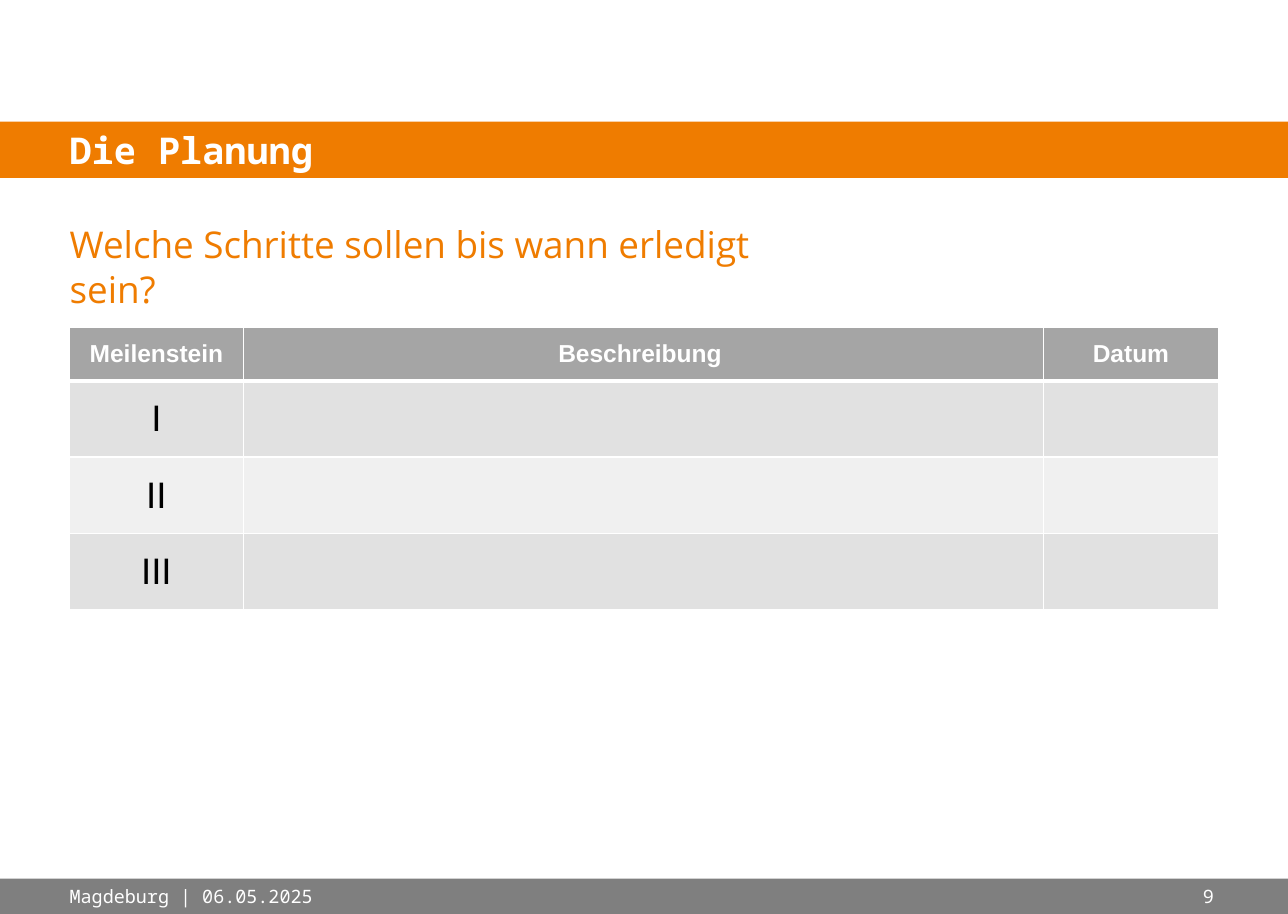
"""Build the planning slide with its milestone table."""
from lxml.etree import SubElement
from pptx import Presentation
from pptx.dml.color import RGBColor
from pptx.enum.shapes import MSO_SHAPE as Shape
from pptx.enum.text import MSO_ANCHOR as Anchor, PP_ALIGN as Align
from pptx.oxml.ns import qn
from pptx.util import Inches, Pt

ORANGE = RGBColor(0xEF, 0x7C, 0x00)
GREY = RGBColor(0x7F, 0x7F, 0x7F)
HEADER_GREY = RGBColor(0xA5, 0xA5, 0xA5)
DARK_ROW = RGBColor(0xE1, 0xE1, 0xE1)
LIGHT_ROW = RGBColor(0xF0, 0xF0, 0xF0)
WHITE = RGBColor(0xFF, 0xFF, 0xFF)
BLACK = RGBColor(0x00, 0x00, 0x00)
MONO = "Noto Sans Mono"
MARGIN = 0.63


def write(frame, text, size, font, color, bold=False, align=Align.LEFT):
    paragraph = frame.paragraphs[0]
    paragraph.alignment = align
    run = paragraph.add_run()
    run.text = text
    run.font.size = Pt(size)
    run.font.name = font
    run.font.color.rgb = color
    run.font.bold = bold


def set_insets(frame, left=0):
    frame.margin_left = Inches(left)
    frame.margin_top = frame.margin_right = frame.margin_bottom = 0
    frame.word_wrap = True


prs = Presentation()
prs.slide_width, prs.slide_height = Inches(11.65), Inches(8.27)
slide = prs.slides.add_slide(prs.slide_layouts[6])

bands = []
for top, height, color in [(7.95, 0.32, GREY), (1.1, 0.51, ORANGE)]:
    band = slide.shapes.add_shape(
        Shape.RECTANGLE, 0, Inches(top), prs.slide_width, Inches(height))
    band.shadow.inherit = False
    band.fill.solid()
    band.fill.fore_color.rgb = color
    band.line.fill.background()
    bands.append(band)

title = bands[1].text_frame
set_insets(title, MARGIN)
title.vertical_anchor = Anchor.MIDDLE
write(title, "Die Planung", 24, MONO, WHITE, bold=True)

captions = [
    (MARGIN, 2.01, 6.85, 0.4, "Welche Schritte sollen bis wann erledigt sein?",
     24, "Open Sans", ORANGE, Anchor.TOP, Align.LEFT),
    (MARGIN, 7.95, 2.71, 0.32, "Magdeburg | 06.05.2025",
     12, MONO, WHITE, Anchor.MIDDLE, Align.LEFT),
    (10.2, 7.95, 0.78, 0.32, "9",
     12, MONO, WHITE, Anchor.MIDDLE, Align.RIGHT),
]
for left, top, width, height, text, size, font, color, anchor, align in captions:
    caption = slide.shapes.add_textbox(
        Inches(left), Inches(top), Inches(width), Inches(height)).text_frame
    set_insets(caption)
    caption.vertical_anchor = anchor
    write(caption, text, size, font, color, align=align)

milestones = [
    ["Meilenstein", "Beschreibung ", "Datum"],
    ["I", "", ""],
    ["II", "", ""],
    ["III", "", ""],
]
column_widths = [1.57, 7.24, 1.58]
row_heights = [0.48] + [0.69] * 3
plan = slide.shapes.add_table(
    len(row_heights), len(column_widths), Inches(MARGIN), Inches(2.96),
    Inches(sum(column_widths)), Inches(sum(row_heights))).table
for column, width in zip(plan.columns, column_widths):
    column.width = Inches(width)

for r, (texts, height) in enumerate(zip(milestones, row_heights)):
    plan.rows[r].height = Inches(height)
    header = r == 0
    for c, text in enumerate(texts):
        cell = plan.cell(r, c)
        cell.vertical_anchor = Anchor.MIDDLE
        cell.margin_left = cell.margin_right = Inches(0.11)
        cell.margin_top = cell.margin_bottom = Inches(0.11)
        if text:
            write(cell.text_frame, text, 16 if header else 24, "Arial",
                  WHITE if header else BLACK, header, Align.CENTER)
        properties = cell._tc.get_or_add_tcPr()
        for side in ("lnL", "lnR", "lnT", "lnB"):
            thick = (r, side) in [(0, "lnB"), (1, "lnT")]
            border = SubElement(properties, qn(f"a:{side}"), w=str(Pt(3 if thick else 1)))
            border_fill = SubElement(border, qn("a:solidFill"))
            SubElement(border_fill, qn("a:srgbClr"), val=str(WHITE))
        cell.fill.solid()
        cell.fill.fore_color.rgb = (
            HEADER_GREY if header else DARK_ROW if r % 2 else LIGHT_ROW)

prs.save("out.pptx")
